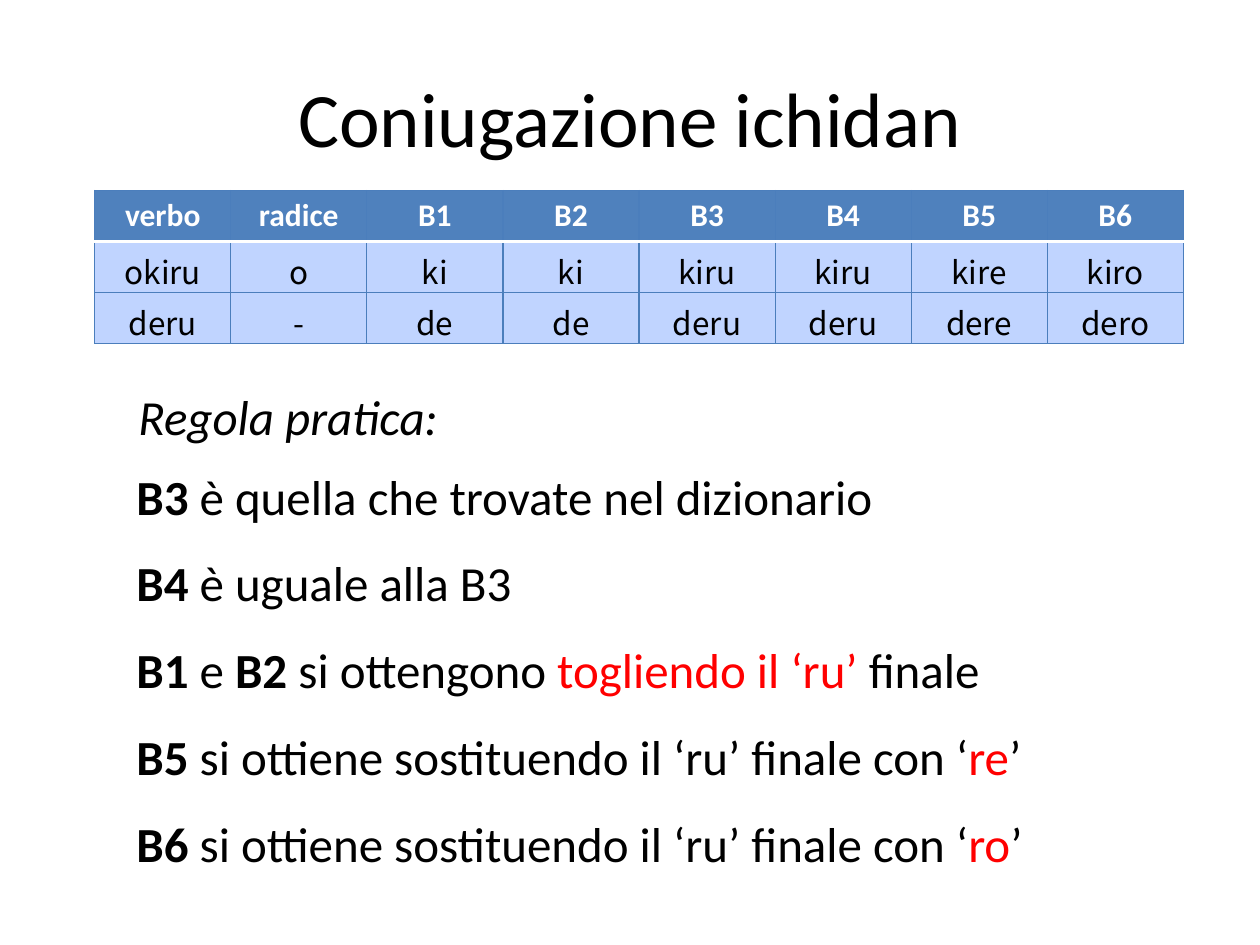
from dataclasses import dataclass

from lxml import etree
from pptx import Presentation
from pptx import util as u
from pptx.dml.color import RGBColor
from pptx.enum import text
from pptx.oxml import ns


@dataclass(frozen=True)
class Theme:
    black: str = "000000"
    white: str = "FFFFFF"
    red: str = "FF0000"
    header: str = "4F81BD"
    body: str = "C0D4FF"
    border: str = "4B7EBC"
    font: str = "Calibri"
    cell_font: str = "Noto Sans CJK JP"
    title_size: int = 44
    rule_size: int = 28
    table_size: int = 18


theme = Theme()


def add_text(left, top, width, height, spans, size, italic=False):
    box = page.shapes.add_textbox(u.Cm(left), u.Cm(top), u.Cm(width), u.Cm(height))
    para = box.text_frame.paragraphs[0]
    para.font.name = theme.font
    para.font.size = u.Pt(size)
    para.font.italic = italic
    for words, bold, color in spans:
        span = para.add_run()
        span.text = words
        span.font.bold = bold
        span.font.color.rgb = RGBColor.from_string(color)
    return box


def add_border(cell, side, color, width):
    line = etree.SubElement(cell._tc.get_or_add_tcPr(), ns.qn(f"a:ln{side}"), w=str(u.Pt(width)))
    fill = etree.SubElement(line, ns.qn("a:solidFill"))
    etree.SubElement(fill, ns.qn("a:srgbClr"), val=color)


deck = Presentation()
deck.slide_width, deck.slide_height = u.Cm(25.4), u.Cm(19.05)
page = deck.slides.add_slide(deck.slide_layouts[6])

title = add_text(1.27, 0.76, 22.86, 3.18, [("Coniugazione ichidan", False, theme.black)], theme.title_size)
title.text_frame.word_wrap = True
title.text_frame.vertical_anchor = text.MSO_ANCHOR.MIDDLE
title.text_frame.paragraphs[0].alignment = text.PP_ALIGN.CENTER

rows = [
    ["verbo", "radice", "B1", "B2", "B3", "B4", "B5", "B6"],
    ["okiru", "o", "ki", "ki", "kiru", "kiru", "kire", "kiro"],
    ["deru", "-", "de", "de", "deru", "deru", "dere", "dero"],
]
table = page.shapes.add_table(
    len(rows), len(rows[0]), u.Cm(1.91), u.Cm(3.84), u.Cm(21.95), u.Cm(3.09)
).table
for row_index, row in enumerate(rows):
    is_header = row_index == 0
    for column_index, word in enumerate(row):
        cell = table.cell(row_index, column_index)
        for side in "LRTB":
            under_header = (row_index, side) in [(0, "B"), (1, "T")]
            color, width = (theme.white, 2) if under_header else (theme.border, 0.75)
            add_border(cell, side, color, width)
        cell.fill.solid()
        cell.fill.fore_color.rgb = RGBColor.from_string(theme.header if is_header else theme.body)
        cell.text = word
        para = cell.text_frame.paragraphs[0]
        para.alignment = text.PP_ALIGN.CENTER
        para.font.name = theme.font if is_header else theme.cell_font
        para.font.size = u.Pt(theme.table_size)
        para.font.bold = is_header
        para.font.color.rgb = RGBColor.from_string(theme.white if is_header else theme.black)

heading = add_text(2.54, 7.67, 6.63, 1.45, [("Regola pratica:", False, theme.black)], theme.rule_size, italic=True)
heading.text_frame.word_wrap = False

replacement = " si ottiene sostituendo il ‘ru’ finale con ‘"
rules = [
    (16, [("B3", True, theme.black), (" è quella che trovate nel dizionario", False, theme.black)]),
    (8.15, [("B4", True, theme.black), (" è uguale alla B3", False, theme.black)]),
    (17.68, [
        ("B1", True, theme.black),
        (" e ", False, theme.black),
        ("B2", True, theme.black),
        (" si ottengono ", False, theme.black),
        ("togliendo il ‘ru’ ", False, theme.red),
        ("finale", False, theme.black),
    ]),
]
for base, ending in [("B5", "re"), ("B6", "ro")]:
    rules.append((18.57, [
        (base, True, theme.black),
        (replacement, False, theme.black),
        (ending, False, theme.red),
        ("’", False, theme.black),
    ]))
for index, (width, spans) in enumerate(rules):
    rule = add_text(2.5, 9.27 + 1.75 * index, width, 1.45, spans, theme.rule_size)
    rule.text_frame.word_wrap = False

deck.save("out.pptx")
